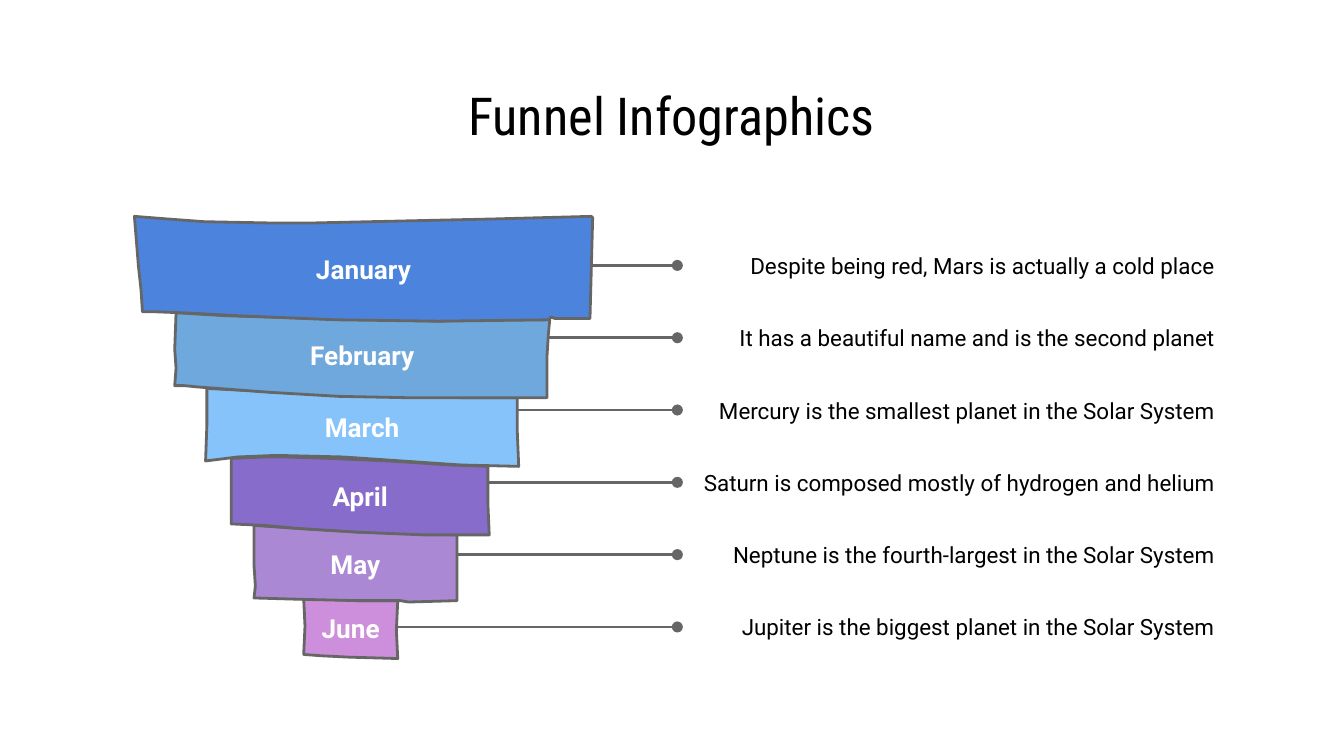
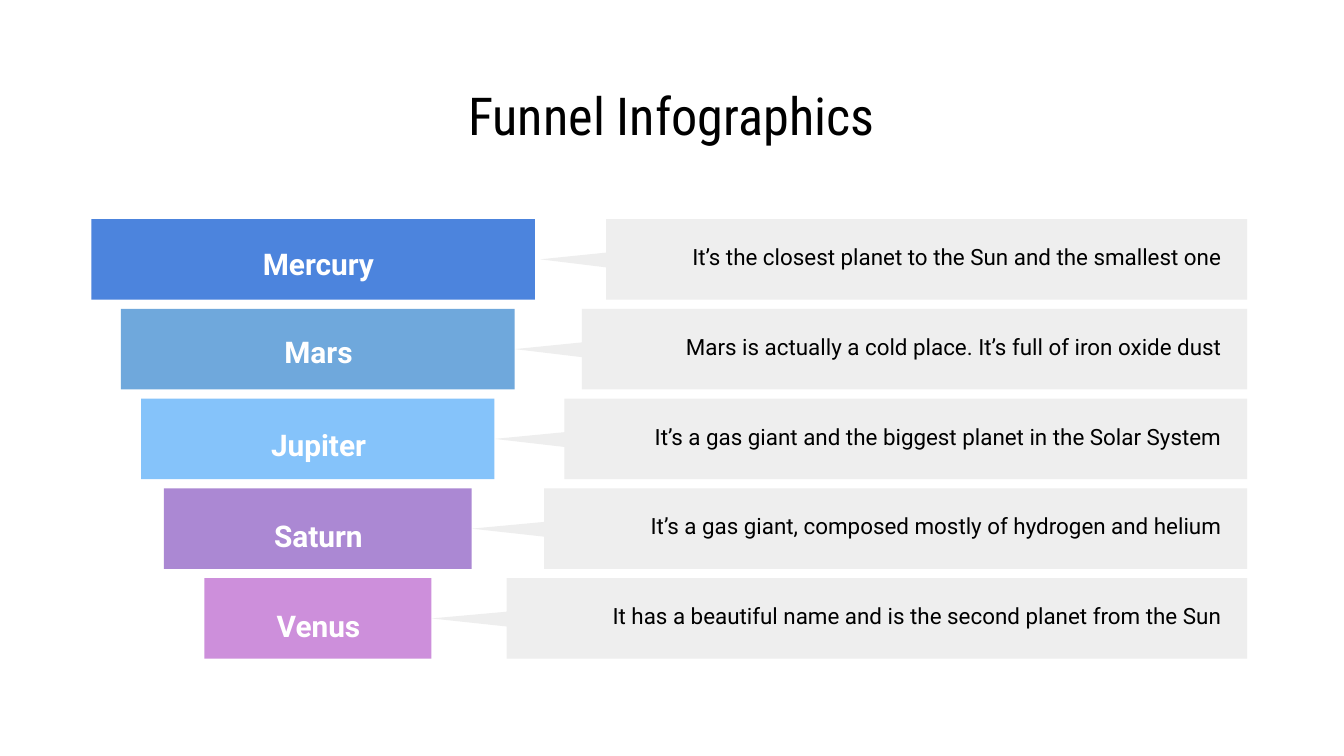
from dataclasses import dataclass

from lxml.etree import SubElement
from pptx import Presentation
from pptx.dml.color import RGBColor
from pptx.enum.shapes import MSO_CONNECTOR, MSO_SHAPE
from pptx.enum.text import MSO_ANCHOR, PP_ALIGN
from pptx.oxml.ns import qn
from pptx.util import Inches, Pt


@dataclass(frozen=True)
class Theme:
    heading: str = "Roboto Condensed"
    body: str = "Roboto"
    title_size: int = 28
    bar_size: int = 16
    band_size: int = 14
    text_size: int = 12
    black: str = "000000"
    white: str = "FFFFFF"
    line: str = "666666"
    panel: str = "EEEEEE"
    blue: str = "4C84DD"
    steel: str = "6FA8DC"
    sky: str = "85C3FA"
    violet: str = "886CCC"
    lilac: str = "AB88D3"
    pink: str = "CD8FDB"


THEME = Theme()
WIDTH = Inches(10)
HEIGHT = WIDTH * 9 // 16
UNIT = WIDTH // 1000  # all boxes lie on a grid of 1000 columns across the slide
TITLE_BOX = (312, 59, 375, 53)
PAD = 10

# label, fill, origin, start of the leader line, outline from the origin, text
BANDS = [
    ("January", THEME.blue, (100, 161), 301,
     [(0, 0), (25, 2), (52, 4), (103, 5), (131, 5), (266, 2), (340, 0), (341, 1),
      (340, 39), (339, 76), (313, 76), (310, 75), (308, 77), (226, 78), (150, 77),
      (78, 74), (41, 72), (15, 71), (6, 71), (5, 55), (3, 37)],
     "Despite being red, Mars is actually a cold place"),
    ("February", THEME.steel, (130, 233), 306,
     [(1, 0), (6, 0), (38, 2), (105, 4), (197, 6), (236, 5), (279, 5), (278, 16),
      (277, 32), (277, 63), (205, 63), (174, 63), (122, 62), (71, 59), (17, 55),
      (7, 54), (0, 54), (1, 41), (0, 27)],
     "It has a beautiful name and is the second planet"),
    ("March", THEME.sky, (153, 289), 301,
     [(1, 0), (40, 2), (92, 5), (196, 7), (232, 7), (232, 33), (233, 58), (190, 57),
      (146, 54), (102, 51), (59, 50), (49, 50), (24, 51), (0, 54), (1, 27)],
     "Mercury is the smallest planet in the Solar System"),
    ("April", THEME.violet, (172, 340), 281,
     [(40, 0), (71, 1), (117, 3), (163, 6), (191, 7), (191, 34), (192, 58), (143, 58),
      (95, 56), (47, 53), (25, 51), (3, 50), (0, 50), (0, 28), (0, 1), (3, 1), (26, 0)],
     "Saturn is composed mostly of hydrogen and helium"),
    ("May", THEME.lilac, (189, 391), 262,
     [(0, 0), (29, 2), (77, 5), (114, 6), (151, 7), (151, 31), (151, 56), (115, 57),
      (109, 56), (78, 56), (35, 55), (0, 54), (1, 45), (0, 30)],
     "Neptune is the fourth-largest in the Solar System"),
    ("June", THEME.pink, (226, 445), 272,
     [(0, 0), (40, 2), (70, 2), (69, 24), (70, 45), (34, 44), (14, 43), (0, 42), (1, 21)],
     "Jupiter is the biggest planet in the Solar System"),
]
STACKING = (5, 4, 2, 3, 1, 0)  # April overlaps March; the others rise to the top band

# label, fill, bar left and right, label width and drop, callout tip and left, text
BARS = [
    ("Mercury", THEME.blue, (68, 398), (178, 7), (402, 451),
     "It’s the closest planet to the Sun and the smallest one"),
    ("Mars", THEME.steel, (90, 383), (158, 6), (383, 433),
     "Mars is actually a cold place. It’s full of iron oxide dust"),
    ("Jupiter", THEME.sky, (105, 368), (158, 8), (368, 420),
     "It’s a gas giant and the biggest planet in the Solar System"),
    ("Saturn", THEME.lilac, (122, 351), (158, 9), (351, 405),
     "It’s a gas giant, composed mostly of hydrogen and helium"),
    ("Venus", THEME.pink, (152, 321), (142, 9), (321, 377),
     "It has a beautiful name and is the second planet from the Sun"),
]


def grid(*cells):
    return [round(c * UNIT) for c in cells]


def color(value):
    return RGBColor.from_string(value)


def write(sp, text, size, ink, align, font=THEME.body, bold=False,
          side_pad=PAD, anchor=MSO_ANCHOR.MIDDLE):
    """Fill a shape with one formatted paragraph."""
    tf = sp.text_frame
    tf.word_wrap = True
    tf.vertical_anchor = anchor
    tf.margin_left = tf.margin_right = side_pad * UNIT
    tf.margin_top = tf.margin_bottom = PAD * UNIT
    p = tf.paragraphs[0]
    p.text = text
    p.alignment = align
    p.font.name, p.font.size, p.font.bold = font, Pt(size), bold
    p.font.color.rgb = color(ink)


def paint(sp, fill, outlined=False):
    sp.shadow.inherit = False
    sp.fill.solid()
    sp.fill.fore_color.rgb = color(fill)
    if outlined:
        sp.line.color.rgb = color(THEME.line)
        sp.line.width = Pt(1.5)
    else:
        sp.line.fill.background()


def add_text(slide, box, text, size, ink, align, **style):
    sp = slide.shapes.add_textbox(*grid(*box))
    write(sp, text, size, ink, align, **style)
    return sp


def add_outline(slide, origin, points):
    """Draw a closed outline whose points are measured from its origin."""
    builder = slide.shapes.build_freeform(*points[0], scale=UNIT)
    builder.add_line_segments(points[1:], close=True)
    return builder.convert_to_shape(*grid(*origin))


def add_title_slide(prs, title):
    slide = prs.slides.add_slide(prs.slide_layouts[5])
    sp = slide.shapes.title
    sp.left, sp.top, sp.width, sp.height = grid(*TITLE_BOX)
    write(sp, title, THEME.title_size, THEME.black, PP_ALIGN.CENTER, font=THEME.heading)
    return slide


def add_leader(slide, start, note):
    """Run a dotted-end line from the funnel to the left side of a note."""
    y = note.top + note.height // 2
    line = slide.shapes.add_connector(MSO_CONNECTOR.STRAIGHT, start * UNIT, y, note.left, y)
    line.end_connect(note, 1)
    line.line.color.rgb = color(THEME.line)
    line.line.width = Pt(1.5)
    SubElement(line.line._get_or_add_ln(), qn("a:tailEnd"), type="oval")
    SubElement(line._element.spPr, qn("a:effectLst"))


def add_notes_column(slide, left, top, width, height, pitch):
    return [add_text(slide, (left, top + i * pitch, width, height), band[-1],
                     THEME.text_size, THEME.black, PP_ALIGN.RIGHT, side_pad=15)
            for i, band in enumerate(BANDS)]


def add_band(slide, band, note):
    label, fill, origin, start, points, _ = band
    add_leader(slide, start, note)
    sp = add_outline(slide, origin, points)
    paint(sp, fill, outlined=True)
    write(sp, label, THEME.band_size, THEME.white, PP_ALIGN.CENTER, bold=True)


def add_callout(slide, tip, left, top, right, height, text):
    """Draw a panel with a pointer on its left side."""
    neck, end, mid = left - tip, right - tip, height / 2
    sp = add_outline(slide, (tip, top), [
        (neck, 0), (neck, mid - 5), (0, mid), (neck, mid + 6),
        (neck, height), (end, height), (end, 0)])
    paint(sp, THEME.panel)
    add_text(slide, (right - 496, top + 8, 487, 45), text, THEME.text_size,
             THEME.black, PP_ALIGN.RIGHT, anchor=MSO_ANCHOR.TOP)


def add_bar(slide, left, right, top, height, fill):
    sp = slide.shapes.add_shape(MSO_SHAPE.RECTANGLE, *grid(left, top, right - left, height))
    paint(sp, fill)


def month_funnel(prs):
    slide = add_title_slide(prs, "Funnel Infographics")
    notes = add_notes_column(slide, left=504, top=173.5, width=415, height=48, pitch=53.8)
    for i in STACKING:
        add_band(slide, BANDS[i], notes[i])


def planet_funnel(prs, top=163, pitch=66.8, height=60, axis=237, right=928):
    slide = add_title_slide(prs, "Funnel Infographics")
    for i, (label, fill, sides, (width, drop), (tip, left), text) in enumerate(BARS):
        y = top + i * pitch
        add_callout(slide, tip, left, y, right, height, text)
        add_bar(slide, *sides, y, height, fill)
        add_text(slide, (axis - width / 2, y + drop, width, 52), label,
                 THEME.bar_size, THEME.white, PP_ALIGN.CENTER, bold=True)


def main():
    prs = Presentation()
    prs.slide_width, prs.slide_height = WIDTH, HEIGHT
    month_funnel(prs)
    planet_funnel(prs)
    prs.save("out.pptx")


if __name__ == "__main__":
    main()
